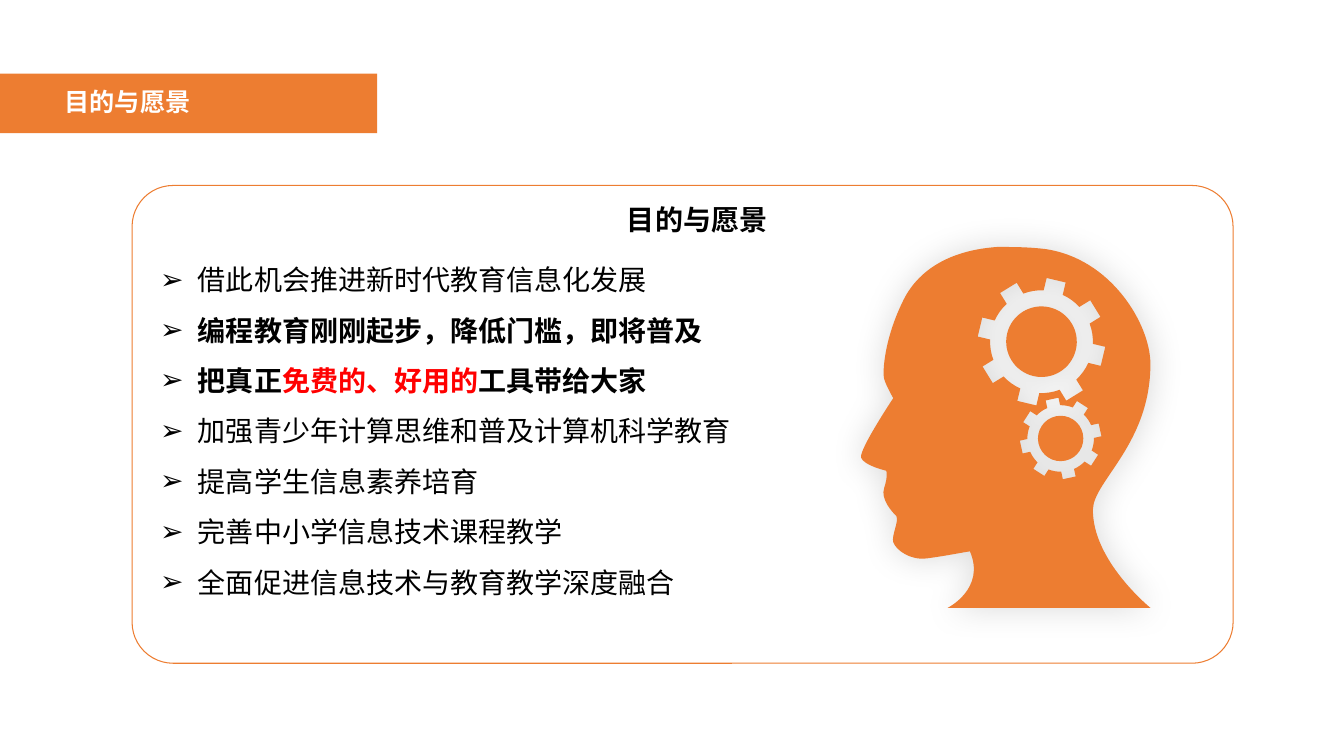
from math import asin, cos, pi, radians, sin, tan

from lxml import etree
from pptx import Presentation
from pptx import util as u
from pptx.dml.color import RGBColor
from pptx.enum import shapes, text
from pptx.oxml import parse_xml
from pptx.oxml.ns import nsdecls, qn

ORANGE = RGBColor(0xED, 0x7D, 0x31)
WHITE = RGBColor(0xFF, 0xFF, 0xFF)
BLACK = RGBColor(0, 0, 0)
RED = RGBColor(0xFF, 0, 0)
FONT = "Noto Sans CJK SC"

# Grid of square cells: 133.3 columns by 75 rows
CELL = u.Inches(0.1)
COLUMNS, ROWS = 133.3, 75

deck = Presentation()
deck.slide_width, deck.slide_height = int(COLUMNS * CELL), ROWS * CELL
slide = deck.slides.add_slide(deck.slide_layouts[6])


def add_block(kind, left, top, width, height, fill=None, line=None):
    place = [int(v * CELL) for v in (left, top, width, height)]
    if kind is None:
        block = slide.shapes.add_textbox(*place)
    else:
        block = slide.shapes.add_shape(kind, *place)
        block.shadow.inherit = False
    if fill is None:
        block.fill.background()
    else:
        block.fill.solid()
        block.fill.fore_color.rgb = fill
    if line is None:
        block.line.fill.background()
    else:
        block.line.color.rgb = line
        block.line.width = u.Pt(0.75)
    block.text_frame.word_wrap = True
    block.text_frame.vertical_anchor = text.MSO_ANCHOR.MIDDLE
    return block


def add_run(paragraph, words, size, color, bold):
    run = paragraph.add_run()
    run.text = words
    run.font.size, run.font.bold, run.font.name = u.Pt(size), bold, FONT
    run.font.color.rgb = color
    etree.SubElement(run.font._element, qn("a:ea")).set("typeface", FONT)


# Section banner
add_block(shapes.MSO_SHAPE.RECTANGLE, 0, 7.3, 37.4, 5.9, fill=ORANGE)
banner_label = add_block(None, 4.3, 8.1, 26.4, 4).text_frame
banner_label.margin_left = u.Inches(0.21)
banner_label.paragraphs[0].alignment = text.PP_ALIGN.JUSTIFY
add_run(banner_label.paragraphs[0], "目的与愿景", 18, WHITE, True)

# Rounded panel and its heading
panel = add_block(shapes.MSO_SHAPE.ROUNDED_RECTANGLE, 13.1, 18.4, 109.2, 47.4, line=ORANGE)
panel.adjustments[0] = 8.6 / 100
heading = add_block(None, 61.2, 19.6, 15.9, 4.4).text_frame
heading.word_wrap = False
add_run(heading.paragraphs[0], "目的与愿景", 20, BLACK, True)

# Goals: each is a bold flag and its coloured pieces
GOALS = [
    (False, [("借此机会推进新时代教育信息化发展", BLACK)]),
    (True, [("编程教育刚刚起步，降低门槛，即将普及", BLACK)]),
    (True, [("把真正", BLACK), ("免费的、好用的", RED), ("工具带给大家", BLACK)]),
    (False, [("加强青少年计算思维和普及计算机科学教育", BLACK)]),
    (False, [("提高学生信息素养培育", BLACK)]),
    (False, [("完善中小学信息技术课程教学", BLACK)]),
    (False, [("全面促进信息技术与教育教学深度融合", BLACK)]),
]
HANGING = u.Pt(27)
goals = add_block(shapes.MSO_SHAPE.RECTANGLE, 14.9, 23.9, 105.6, 36.3, fill=WHITE).text_frame
goals.vertical_anchor = text.MSO_ANCHOR.TOP
for number, (bold, pieces) in enumerate(GOALS):
    goal = goals.add_paragraph() if number else goals.paragraphs[0]
    goal.alignment = text.PP_ALIGN.LEFT
    goal.line_spacing = u.Pt(36)
    indent = goal._p.get_or_add_pPr()
    indent.set("marL", str(HANGING))
    indent.set("indent", str(-HANGING))
    etree.SubElement(indent, qn("a:buFont")).set("typeface", "Arial")
    etree.SubElement(indent, qn("a:buChar")).set("char", "➢")
    for words, color in pieces:
        add_run(goal, words, 20, color, bold)

# Head profile: two numbers draw a straight edge, six a Bézier curve
PROFILE = [
    (98.9, 24.5),
    (100.4, 24.5, 101.9, 24.5, 103.6, 24.7),
    (110.2, 25.6, 114.1, 32.2, 114.1, 36.1),
    (114.1, 44, 108.5, 47.7, 108.4, 50.5),
    (108.3, 55.6, 114.1, 60.3, 114.1, 60.3),
    (94, 60.3),
    (94, 60.3, 97.8, 58.4, 96.2, 54.7),
    (95.5, 54.8, 93.5, 55.2, 91.9, 55.4),
    (90.3, 55.6, 88.9, 54.6, 88.6, 53.8),
    (88.4, 53.1, 89.2, 51.7, 88.9, 51.2),
    (88.5, 50.8, 87.3, 49.5, 87.7, 48.4),
    (88.1, 47.2, 87.9, 46.7, 87.9, 46.7),
    (87.9, 46.7, 85.7, 46.2, 85.4, 45.4),
    (85.2, 44.6, 88.6, 39.5, 88.6, 39.5),
    (88.6, 39.5, 87.9, 38.3, 87.7, 37.6),
    (87.5, 37, 87.7, 33.4, 89.8, 29.4),
    (91.5, 26.4, 94.7, 24.8, 98.9, 24.5),
]
outlines = [PROFILE]

# Gears: centre, tooth tip, rim and hub radii, half tooth width, turn in degrees
GEARS = [
    (103.3, 33.9, 6.27, 5.1, 0.97, 3.5, 13.4),
    (105.2, 43.5, 4, 3.3, 0.65, 2.25, -12.3),
]
for cx, cy, tip, rim, half, hub, turn in GEARS:
    for radius, parts, spread in ((rim, 8, asin(half / rim)), (hub, 4, 0)):
        ring = []
        sweep = 2 * pi / parts - 2 * spread
        pull = radius * 4 / 3 * tan(sweep / 4)
        for part in range(parts):
            angle = radians(turn) + part * 2 * pi / parts
            start, end = angle + spread, angle + spread + sweep
            x0, y0 = cx + radius * sin(start), cy - radius * cos(start)
            x3, y3 = cx + radius * sin(end), cy - radius * cos(end)
            if spread:  # a tooth stands before each arc
                for side in (-half, half):
                    ring.append((cx + tip * sin(angle) + side * cos(angle),
                                 cy - tip * cos(angle) + side * sin(angle)))
            if spread or part == 0:
                ring.append((x0, y0))
            ring.append((x0 + pull * cos(start), y0 + pull * sin(start),
                         x3 - pull * cos(end), y3 - pull * sin(end), x3, y3))
        outlines.append(ring)

# One outline with the gears cut out
contours = [[[int(v * CELL) for v in edge] for edge in outline] for outline in outlines]
builder = slide.shapes.build_freeform(*contours[0][0])
for number, contour in enumerate(contours):
    if number:
        builder.move_to(*contour[0])
    builder.add_line_segments([edge[-2:] for edge in contour[1:]], close=True)
head = builder.convert_to_shape()
head.fill.solid()
head.fill.fore_color.rgb = ORANGE
head.line.fill.background()

# Bend the six-number edges into curves
edges = [edge for contour in contours for edge in contour[1:]]
for segment, edge in zip(list(head._element.iter(qn("a:lnTo"))), edges):
    if len(edge) == 6:
        curve = etree.Element(qn("a:cubicBezTo"))
        for x, y in zip(edge[::2], edge[1::2]):
            point = etree.SubElement(curve, qn("a:pt"))
            point.set("x", str(x - head.left))
            point.set("y", str(y - head.top))
        segment.getparent().replace(segment, curve)

# Soft glow of shade around the head
head._element.spPr.append(parse_xml(
    f'<a:effectLst {nsdecls("a")}><a:outerShdw blurRad="{u.Pt(24)}" dist="0" dir="0" algn="ctr" '
    'rotWithShape="0"><a:srgbClr val="000000"><a:alpha val="15000"/></a:srgbClr>'
    '</a:outerShdw></a:effectLst>'))

deck.save("out.pptx")
